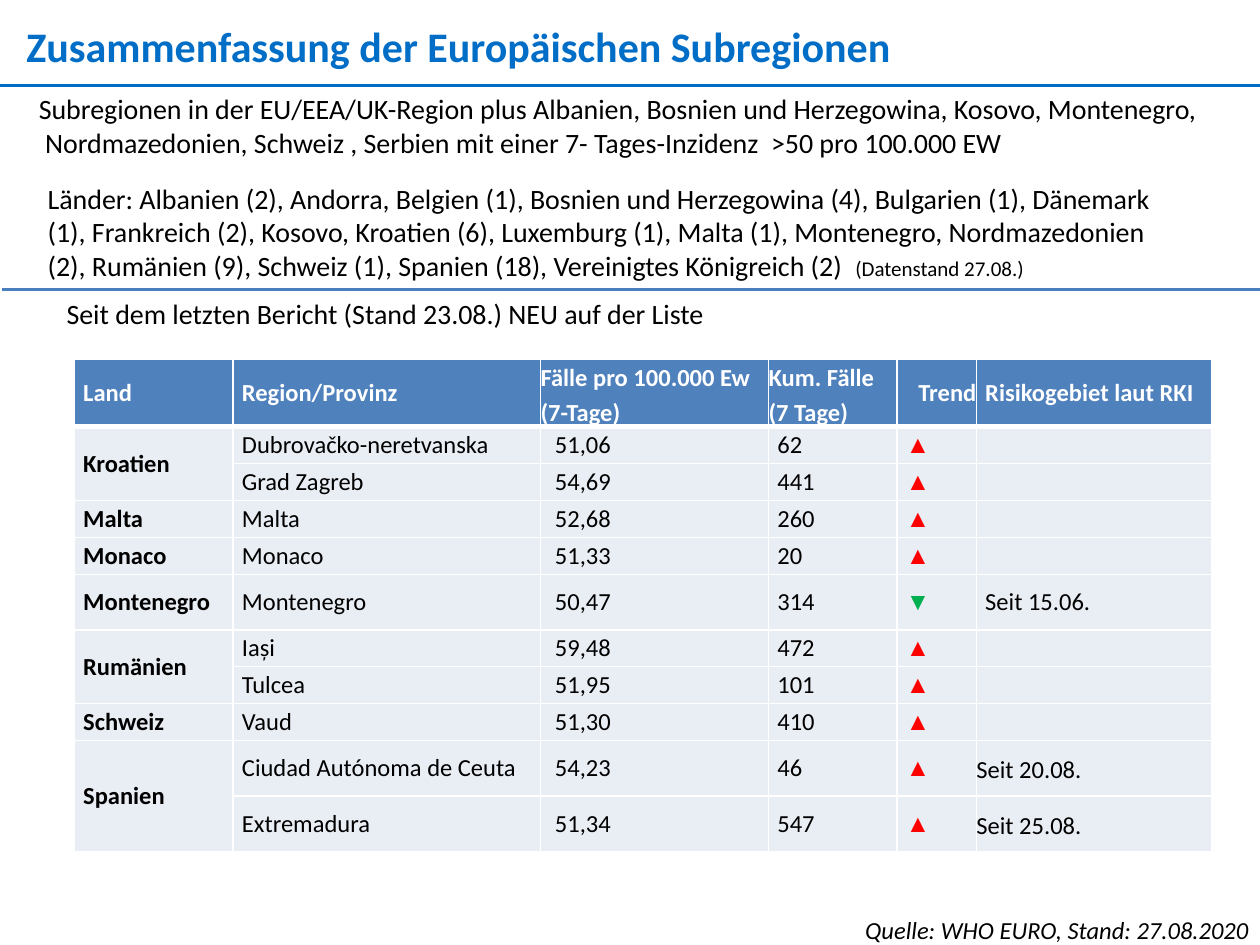
from lxml.etree import SubElement
from pptx import Presentation
from pptx.dml.color import RGBColor
from pptx.enum.shapes import MSO_CONNECTOR as Connector
from pptx.enum.text import MSO_ANCHOR as Anchor, MSO_AUTO_SIZE as AutoSize, PP_ALIGN as Align
from pptx.oxml.ns import qn
from pptx.util import Inches, Pt

COLORS = {
    "title": "006EC7", "rule": "4B7EBC", "text": "000000", "white": "FFFFFF",
    "header": "4F81BD", "body": "E9EDF4", "up": "FF0000", "down": "00B050",
}
UP, DOWN = "▲", "▼"

TEXTS = [
    {"box": (2.1, 2.13, 96.3, 5.33), "inset": False,
     "runs": [("Zusammenfassung der Europäischen Subregionen",
               {"size": 24, "color": "title", "bold": True})]},
    {"box": (53.9, 96.13, 46.2, 4.53), "align": Align.RIGHT,
     "runs": [("Quelle: WHO EURO, Stand: 27.08.2020", {"size": 14, "italic": True})]},
    {"box": (2.1, 9.07, 94.3, 8.53),
     "runs": [("Subregionen in der EU/EEA/UK-Region plus Albanien, Bosnien und Herzegowina, "
               "Kosovo, Montenegro,  Nordmazedonien, Schweiz , Serbien mit einer "
               "7- Tages-Inzidenz  >50 pro 100.000 EW", {"size": 16})]},
    {"box": (4.3, 30.67, 79.5, 4.93),
     "runs": [("Seit dem letzten Bericht (Stand 23.08.) NEU auf der Liste", {"size": 16})]},
    {"box": (2.8, 18.53, 92.1, 12.13),
     "runs": [("Länder: Albanien (2), Andorra, Belgien (1), Bosnien und Herzegowina (4), "
               "Bulgarien (1), Dänemark (1), Frankreich (2), Kosovo, Kroatien (6), "
               "Luxemburg (1), Malta (1), Montenegro, Nordmazedonien (2), Rumänien (9), "
               "Schweiz (1), Spanien (18), Vereinigtes Königreich (2)  ", {"size": 16}),
              ("(Datenstand 27.08.)", {"size": 12})]},
]
RULES = [(0, 100, 9.07, "title", 1.5), (0.2, 100.3, 30.67, "rule", 1.75)]

HEADERS = ["Land", "Region/Provinz", ["Fälle pro 100.000 Ew", "(7-Tage)"],
           ["Kum. Fälle", "(7 Tage)"], "Trend", "Risikogebiet laut RKI"]
COUNTRIES = [
    ("Kroatien", [("Dubrovačko-neretvanska", " 51,06", "62", UP, ""),
                  ("Grad Zagreb", " 54,69", "441", UP, "")]),
    ("Malta", [("Malta", " 52,68", "260", UP, "")]),
    ("Monaco", [("Monaco", " 51,33", "20", UP, "")]),
    ("Montenegro", [("Montenegro", " 50,47", "314", DOWN, "Seit 15.06.")]),
    ("Rumänien", [("Iași", " 59,48", "472", UP, ""),
                  ("Tulcea", " 51,95", "101", UP, "")]),
    ("Schweiz", [("Vaud", " 51,30", "410", UP, "")]),
    ("Spanien", [("Ciudad Autónoma de Ceuta", " 54,23", "46", UP, ["Seit 20.08."]),
                 ("Extremadura", " 51,34", "547", UP, ["Seit 25.08."])]),
]
TABLE_LEFT, TABLE_TOP = 5.9, 38
COLUMN_SHARES = [12.6, 24.4, 18.1, 10.2, 6.3, 18.7]
TALL_ROW, LOW_ROW = 5.87, 3.91

INDENTED = {"space_before": Pt(2), "space_after": Pt(2)}
LOOSE = {"line_spacing": 1.15}
MARGINS = ("margin_left", "margin_top", "margin_right", "margin_bottom")

presentation = Presentation()
presentation.slide_width, presentation.slide_height = Inches(10), Inches(7.5)
slide = presentation.slides.add_slide(presentation.slide_layouts[6])


def across(share):
    return round(presentation.slide_width * share / 100)


def down(share):
    return round(presentation.slide_height * share / 100)


def apply(target, values):
    for name, value in values.items():
        setattr(target, name, value)


def rgb(name):
    return RGBColor.from_string(COLORS[name])


def add_run(paragraph, text, size=14, color="text", name="Calibri", **style):
    run = paragraph.add_run()
    run.text = text
    apply(run.font, {"size": Pt(size), "name": name, **style})
    run.font.color.rgb = rgb(color)


def add_text(box, runs, align=Align.LEFT, inset=True):
    left, top, width, height = box
    shape = slide.shapes.add_textbox(across(left), down(top), across(width), down(height))
    frame = shape.text_frame
    apply(frame, {"word_wrap": True, "auto_size": AutoSize.SHAPE_TO_FIT_TEXT})
    if not inset:
        apply(frame, dict.fromkeys(MARGINS, 0))
    paragraph = frame.paragraphs[0]
    paragraph.alignment = align
    for text, style in runs:
        add_run(paragraph, text, **style)


def add_rule(start, end, height, color, weight):
    line = slide.shapes.add_connector(
        Connector.STRAIGHT, across(start), down(height), across(end), down(height))
    line.line.color.rgb = rgb(color)
    line.line.width = Pt(weight)
    SubElement(line._element.spPr, qn("a:effectLst"))


def add_borders(cell, bottom):
    properties = cell._tc.get_or_add_tcPr()
    for side, weight in {"L": 1, "R": 1, "T": 1, "B": bottom}.items():
        border = SubElement(properties, qn(f"a:ln{side}"), w=str(Pt(weight)))
        fill = SubElement(border, qn("a:solidFill"))
        SubElement(fill, qn("a:srgbClr"), val=COLORS["white"])


def fill_cell(cell, content, fill, bottom=1, align=Align.LEFT, **style):
    apply(cell, {"vertical_anchor": Anchor.MIDDLE, **dict.fromkeys(MARGINS, 0)})
    add_borders(cell, bottom)
    cell.fill.solid()
    cell.fill.fore_color.rgb = rgb(fill)
    is_loose = isinstance(content, list)
    for index, text in enumerate(content if is_loose else [content]):
        frame = cell.text_frame
        paragraph = frame.add_paragraph() if index else frame.paragraphs[0]
        if not text:
            SubElement(paragraph._p, qn("a:endParaRPr"), sz="1400")
            continue
        paragraph.alignment = align
        apply(paragraph, LOOSE if is_loose else INDENTED)
        if not is_loose:
            paragraph._p.get_or_add_pPr().set("marL", str(Inches(0.07)))
        add_run(paragraph, text, **style)


def body_style(column, text):
    if text == UP:
        return {"color": "up", "name": "Arial", "bold": False}
    if text == DOWN:
        return {"color": "down", "name": "Arial", "bold": False}
    return {"bold": column == 0}


def add_table():
    rows = [(country if index == 0 else "", *region)
            for country, regions in COUNTRIES for index, region in enumerate(regions)]
    heights = [TALL_ROW] + [TALL_ROW if row[-1] else LOW_ROW for row in rows]
    frame = slide.shapes.add_table(
        len(heights), len(COLUMN_SHARES), across(TABLE_LEFT), down(TABLE_TOP),
        across(sum(COLUMN_SHARES)), down(sum(heights)))
    table = frame.table
    table.horz_banding = False
    for column, share in zip(table.columns, COLUMN_SHARES):
        column.width = across(share)
    for row, share in zip(table.rows, heights):
        row.height = down(share)
    for column, content in enumerate(HEADERS):
        fill_cell(table.cell(0, column), content, "header", bottom=3, color="white", bold=True,
                  align=Align.RIGHT if content == "Trend" else Align.LEFT)
    for number, row in enumerate(rows, 1):
        for column, content in enumerate(row):
            fill_cell(table.cell(number, column), content, "body", **body_style(column, content))
    first = 1
    for _, regions in COUNTRIES:
        last = first + len(regions) - 1
        if last > first:
            table.cell(first, 0).merge(table.cell(last, 0))
        first = last + 1


for text in TEXTS:
    add_text(**text)
for rule in RULES:
    add_rule(*rule)
add_table()
presentation.save("out.pptx")
